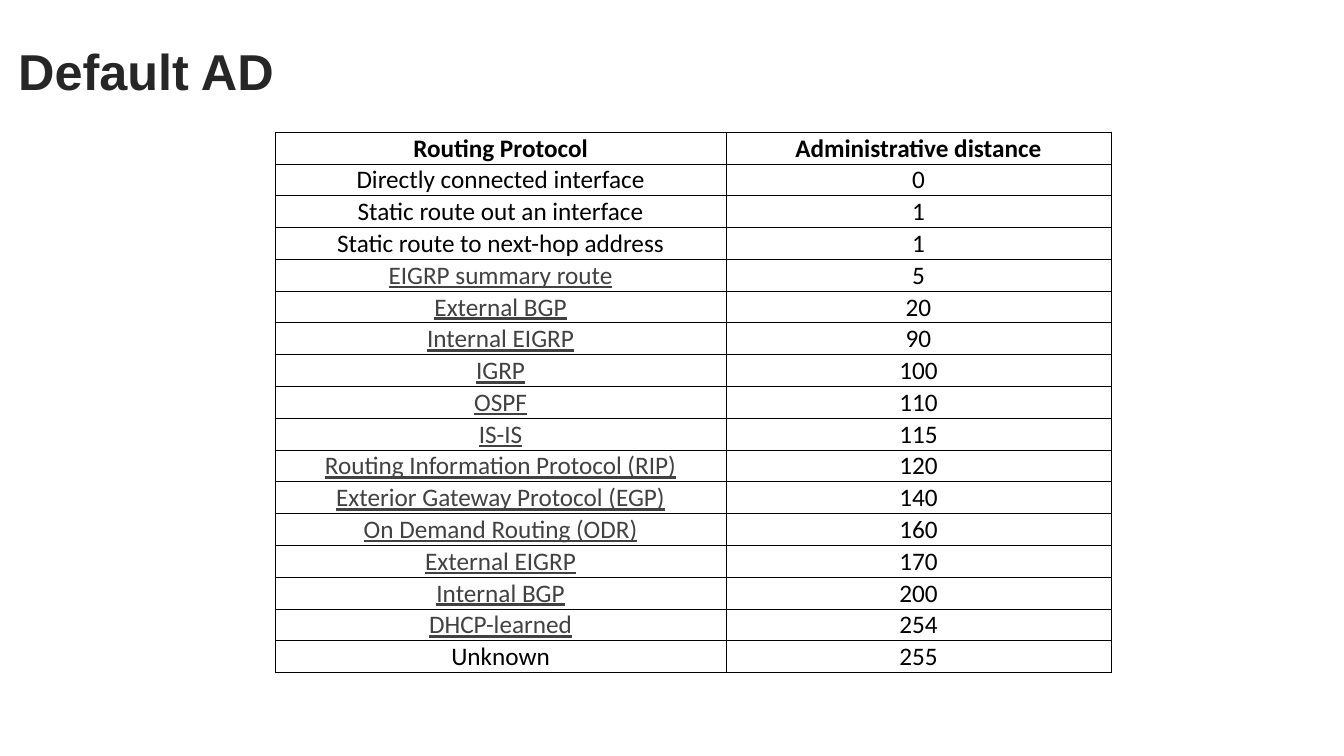
from dataclasses import dataclass

from lxml.etree import SubElement
from pptx import Presentation
from pptx.dml.color import RGBColor
from pptx.enum.text import MSO_ANCHOR as Anchor, PP_ALIGN as Align
from pptx.oxml.ns import qn
from pptx.util import Inches, Pt


@dataclass(frozen=True)
class Theme:
    title_font: str = "Arial"
    table_font: str = "Calibri"
    title_size: int = 36
    table_size: int = 18
    title_color: str = "262626"
    text_color: str = "000000"
    link_color: str = "414141"
    background: str = "FFFFFF"
    border_color: str = "000000"
    border_width: float = 0.5


THEME = Theme()

HEADER = ("Routing Protocol", "Administrative distance")
DISTANCES = [
    ("Directly connected interface", 0),
    ("Static route out an interface", 1),
    ("Static route to next-hop address", 1),
    ("EIGRP summary route", 5),
    ("External BGP", 20),
    ("Internal EIGRP", 90),
    ("IGRP", 100),
    ("OSPF", 110),
    ("IS-IS", 115),
    ("Routing Information Protocol (RIP)", 120),
    ("Exterior Gateway Protocol (EGP)", 140),
    ("On Demand Routing (ODR)", 160),
    ("External EIGRP", 170),
    ("Internal BGP", 200),
    ("DHCP-learned", 254),
    ("Unknown", 255),
]
LINKED_DISTANCES = range(5, 255)
COLUMN_WIDTHS = (4.47, 3.82)


def write_text(text_frame, text, *, font=THEME.table_font, size=THEME.table_size,
               color=THEME.text_color, bold=False, underline=False,
               align=Align.CENTER, line_spacing=None):
    paragraph = text_frame.paragraphs[0]
    paragraph.alignment = align
    paragraph.line_spacing = line_spacing
    run = paragraph.add_run()
    run.text = text
    run.font.name = font
    run.font.size = Pt(size)
    run.font.bold = bold
    run.font.underline = underline
    run.font.color.rgb = RGBColor.from_string(color)


def add_borders(cell):
    properties = cell._tc.get_or_add_tcPr()
    for side in ("a:lnL", "a:lnR", "a:lnT", "a:lnB"):
        line = SubElement(properties, qn(side), w=str(Pt(THEME.border_width)))
        fill = SubElement(line, qn("a:solidFill"))
        SubElement(fill, qn("a:srgbClr"), val=THEME.border_color)


def format_cell(cell, text, anchor=Anchor.BOTTOM, **text_format):
    cell.margin_left = cell.margin_right = cell.margin_top = Inches(0.01)
    cell.margin_bottom = Inches(0)
    cell.vertical_anchor = anchor
    add_borders(cell)
    cell.fill.solid()
    cell.fill.fore_color.rgb = RGBColor.from_string(THEME.background)
    write_text(cell.text_frame, text, **text_format)


def add_title(slide, text):
    title = slide.shapes.title
    title.left, title.top = Inches(0.08), Inches(0.15)
    title.width, title.height = Inches(13.18), Inches(1.17)
    title.text_frame.vertical_anchor = Anchor.MIDDLE
    title.text_frame.word_wrap = True
    write_text(title.text_frame, text, font=THEME.title_font, size=THEME.title_size,
               color=THEME.title_color, bold=True, align=Align.LEFT, line_spacing=0.9)


def add_distance_table(slide):
    frame = slide.shapes.add_table(
        len(DISTANCES) + 1, len(HEADER),
        Inches(2.73), Inches(1.31), Inches(sum(COLUMN_WIDTHS)), Inches(5.28))
    table = frame.table
    table.first_row = table.horz_banding = False
    for column, width in zip(table.columns, COLUMN_WIDTHS):
        column.width = Inches(width)
    for column_index, heading in enumerate(HEADER):
        format_cell(table.cell(0, column_index), heading, Anchor.MIDDLE, bold=True)
    for row_index, (protocol, distance) in enumerate(DISTANCES, start=1):
        linked = distance in LINKED_DISTANCES
        format_cell(table.cell(row_index, 0), protocol, underline=linked,
                    color=THEME.link_color if linked else THEME.text_color)
        format_cell(table.cell(row_index, 1), str(distance))


def main():
    presentation = Presentation()
    presentation.slide_width = Inches(13.33)
    presentation.slide_height = Inches(7.5)
    slide = presentation.slides.add_slide(presentation.slide_layouts[5])
    add_title(slide, "Default AD")
    add_distance_table(slide)
    presentation.save("out.pptx")


if __name__ == "__main__":
    main()
